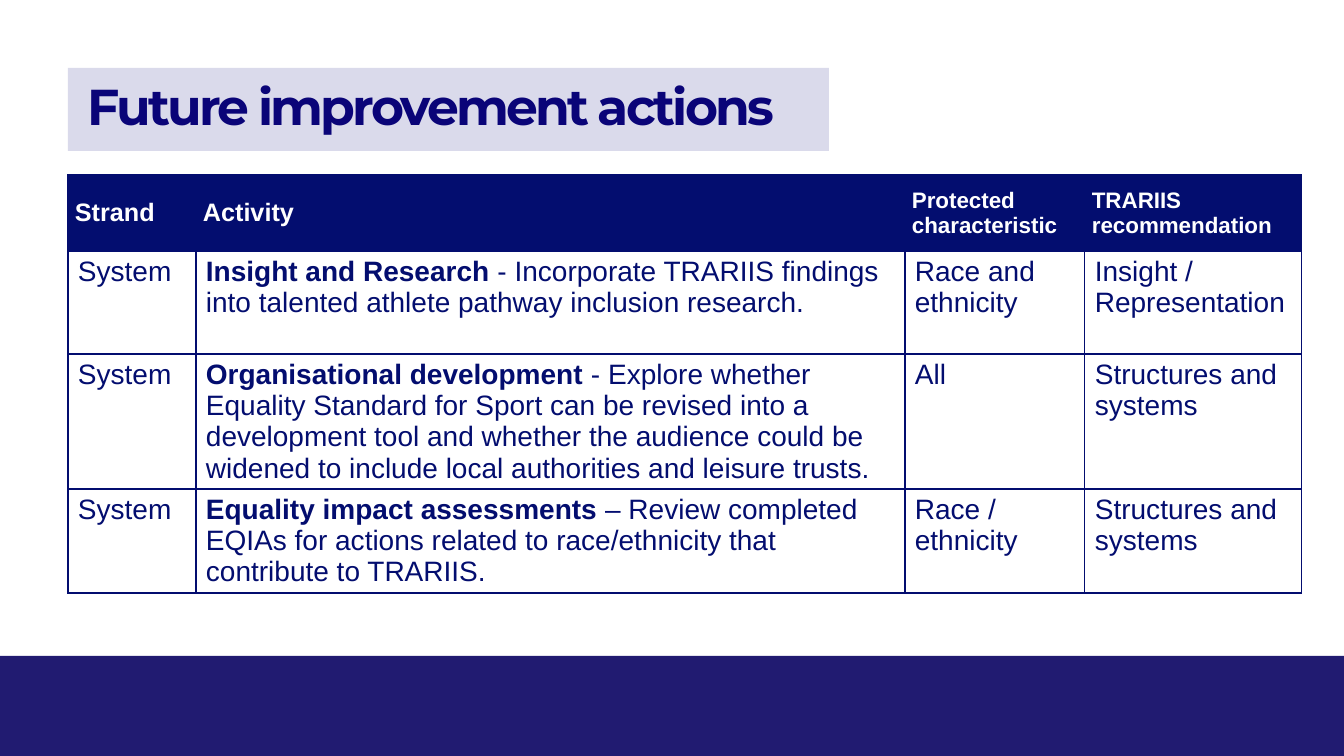
from lxml import etree
from pptx import Presentation
from pptx.dml.color import RGBColor
from pptx.enum.shapes import MSO_SHAPE
from pptx.enum.text import MSO_ANCHOR, PP_ALIGN
from pptx.oxml.ns import qn
from pptx.util import Pt

PX = 914400 / 100.8
RECT = MSO_SHAPE.RECTANGLE
TOP, MIDDLE = MSO_ANCHOR.TOP, MSO_ANCHOR.MIDDLE
LEFT = PP_ALIGN.LEFT

WHITE = RGBColor(0xFF, 0xFF, 0xFF)
NAVY = RGBColor(0x03, 0x0D, 0x6F)
INDIGO = RGBColor(0x0A, 0x04, 0x78)
LILAC = RGBColor(0xDA, 0xDA, 0xEB)
BAND = RGBColor(0x21, 0x1B, 0x71)

COLS = [128, 709, 180, 217]
ROWS = [76, 103, 135, 104]
HEADS = [("Strand", 18), ("Activity", 18), ("Protected characteristic", 16),
         ("TRARIIS recommendation", 16)]
# strand, activity name, activity detail, characteristic, recommendation
ACTIONS = [
    ("System", "Insight and Research",
     " - Incorporate TRARIIS findings into talented athlete pathway "
     "inclusion research.",
     "Race and ethnicity", "Insight / Representation"),
    ("System", "Organisational development",
     " - Explore whether Equality Standard for Sport can be revised into a "
     "development tool and whether the audience could be widened to include "
     "local authorities and leisure trusts.",
     "All", "Structures and systems"),
    ("System", "Equality impact assessments",
     " – Review completed EQIAs for actions related to race/ethnicity that "
     "contribute to TRARIIS.",
     "Race / ethnicity", "Structures and systems"),
]


def px(n):
    return round(n * PX)


def assign(obj, values):
    for name, value in values.items():
        setattr(obj, name, value)


def insets(left, top, right, bottom):
    return dict(margin_left=px(left), margin_top=px(top),
                margin_right=px(right), margin_bottom=px(bottom))


def add_run(para, text, color, size, bold=False, face="Arial"):
    run = para.add_run()
    run.text = text
    assign(run.font, dict(name=face, size=Pt(size), bold=bold))
    run.font.color.rgb = color
    return run


def add_rect(slide, box, color):
    shape = slide.shapes.add_shape(RECT, *map(px, box))
    shape.shadow.inherit = False
    shape.fill.solid()
    shape.fill.fore_color.rgb = color
    shape.line.fill.background()
    return shape


def add_title(slide, box, text):
    frame = add_rect(slide, box, LILAC).text_frame
    assign(frame, dict(word_wrap=False, vertical_anchor=MIDDLE,
                       **insets(20, 5, 20, 5)))
    para = frame.paragraphs[0]
    assign(para, dict(alignment=LEFT, line_spacing=0.9))
    run = add_run(para, text, INDIGO, 36, True, "Montserrat")
    run.font._element.set("spc", "-200")


def add_edges(cell):
    props = cell._tc.get_or_add_tcPr()
    for side in ("lnL", "lnR", "lnT", "lnB"):
        line = etree.SubElement(props, qn("a:" + side), w=str(Pt(1)))
        fill = etree.SubElement(line, qn("a:solidFill"))
        etree.SubElement(fill, qn("a:srgbClr"), val=str(NAVY))


def fill_cell(cell, parts, back, ink, form):
    """Write (text, size, bold) parts into a bordered cell."""
    add_edges(cell)
    cell.fill.solid()
    cell.fill.fore_color.rgb = back
    assign(cell, form)
    for text, size, bold in parts:
        add_run(cell.text_frame.paragraphs[0], text, ink, size, bold)


def add_actions(slide, left, top):
    box = map(px, (left, top, sum(COLS), sum(ROWS)))
    table = slide.shapes.add_table(len(ROWS), len(COLS), *box).table
    assign(table, dict(first_row=True, horz_banding=False))
    for col, width in zip(table.columns, COLS):
        col.width = px(width)
    for row, height in zip(table.rows, ROWS):
        row.height = px(height)

    form = dict(vertical_anchor=MIDDLE, **insets(7, 5, 1, 5))
    for cell, (text, size) in zip(table.rows[0].cells, HEADS):
        fill_cell(cell, [(text, size, True)], NAVY, WHITE, form)

    form = dict(vertical_anchor=TOP, **insets(10, 5, 10, 5))
    for r, (strand, name, detail, trait, advice) in enumerate(ACTIONS, 1):
        cells = [[(strand, 20, False)],
                 [(name, 20, True), (detail, 20, False)],
                 [(trait, 20, False)],
                 [(advice, 20, False)]]
        for c, parts in enumerate(cells):
            fill_cell(table.cell(r, c), parts, WHITE, NAVY, form)


def main():
    deck = Presentation()
    assign(deck, dict(slide_width=px(1344), slide_height=px(756)))
    slide = deck.slides.add_slide(deck.slide_layouts[6])
    add_rect(slide, (0, 656, 1344, 100), BAND)
    add_title(slide, (68, 68, 761, 83), "Future improvement actions")
    add_actions(slide, 68, 175)
    deck.save("out.pptx")


if __name__ == "__main__":
    main()
